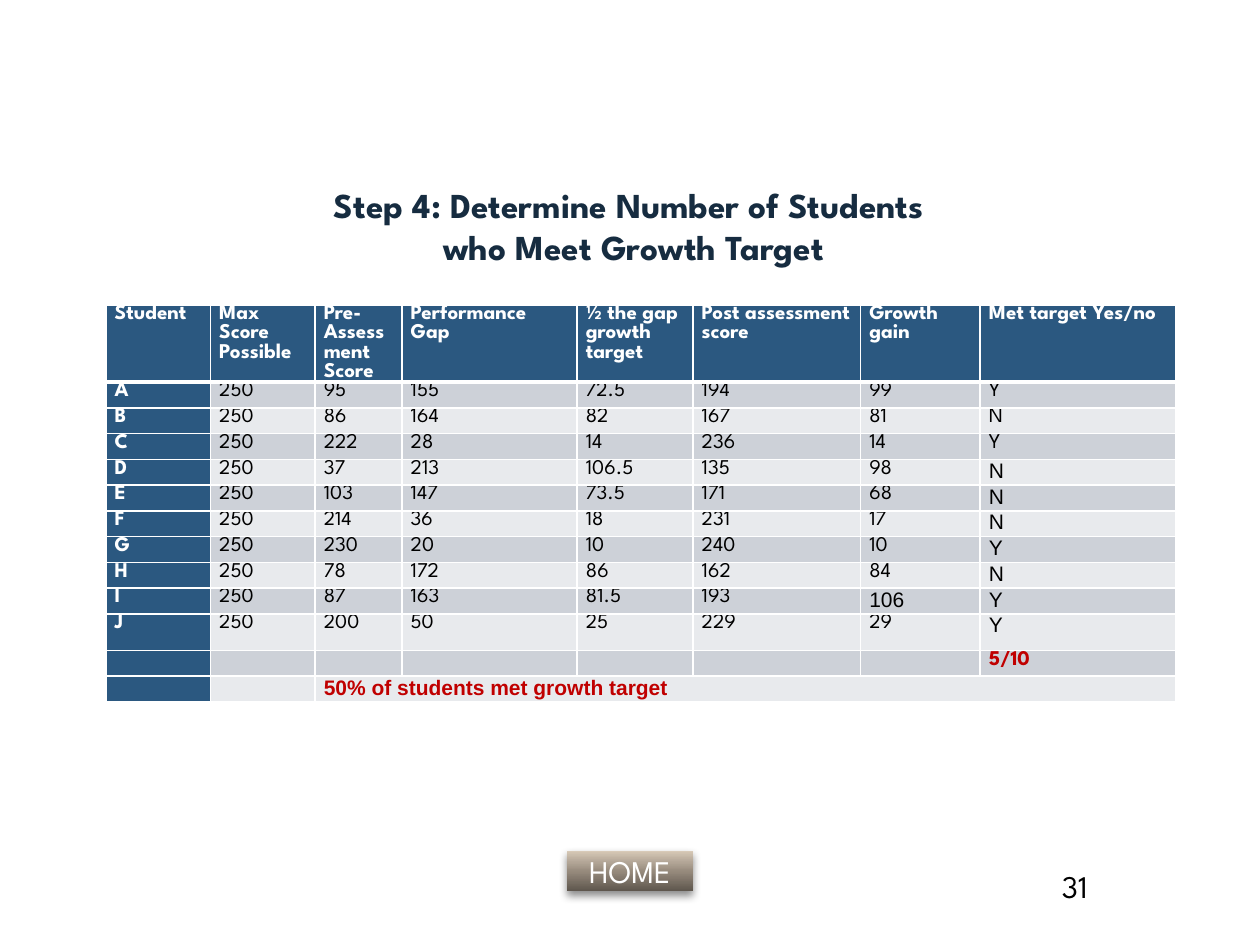
from dataclasses import dataclass
from lxml import etree
from pptx import Presentation
from pptx.dml.color import RGBColor
from pptx.enum.shapes import MSO_SHAPE as Shape
from pptx.enum.text import MSO_ANCHOR as Anchor, PP_ALIGN as Align
from pptx.oxml import parse_xml
from pptx.oxml.ns import nsdecls, qn
from pptx.util import Inches, Pt

HEADING = "League Spartan"
BLUE, WHITE, BLACK, RED = "2B5880", "FFFFFF", "000000", "C00000"
BANDS = ("CDD1D8", "E8EAED")


@dataclass(frozen=True)
class Style:
    size: float
    color: str = BLACK
    bold: bool = False
    name: str = HEADING


@dataclass(frozen=True)
class Student:
    name: str
    pre: str
    gap: str
    target: str
    post: str
    gain: str
    met: str

    def cells(self) -> list[str]:
        return [self.name, "250", self.pre, self.gap, self.target,
                self.post, self.gain, self.met]


HEADERS = ["Student", "Max Score Possible", "Pre-Assessment Score",
           "Performance Gap", "½ the gap growth target",
           "Post assessment score", "Growth gain", "Met target Yes/no"]
STUDENTS = [
    Student("A", "95", "155", "72.5", "194", "99", "Y"),
    Student("B", "86", "164", "82", "167", "81", "N"),
    Student("C", "222", "28", "14", "236", "14", "Y"),
    Student("D", "37", "213", "106.5", "135", "98", "N"),
    Student("E", "103", "147", "73.5", "171", "68", "N"),
    Student("F", "214", "36", "18", "231", "17", "N"),
    Student("G", "230", "20", "10", "240", "10", "Y"),
    Student("H", "78", "172", "86", "162", "84", "N"),
    Student("I", "87", "163", "81.5", "193", "106", "Y"),
    Student("J", "200", "50", "25", "229", "29", "Y"),
]
COL_WIDTHS = (0.83, 0.83, 0.69, 1.39, 0.92, 1.33, 0.95, 1.55)
HEADER_H, LAST_STUDENT_H, TABLE_H = 0.6, 0.29, 3.14
ROW_H = (TABLE_H - HEADER_H - LAST_STUDENT_H) / (len(STUDENTS) + 1)


def rgb(value: str) -> RGBColor:
    return RGBColor.from_string(value)


def set_attrs(obj, values: dict) -> None:
    for key, value in values.items():
        setattr(obj, key, value)


def write(p, text: str, style: Style) -> None:
    if not text:
        etree.SubElement(p._p, qn("a:endParaRPr"), sz=str(style.size * 100))
        return
    p.text = text
    for r in p.runs:
        set_attrs(r.font, {"size": Pt(style.size), "bold": style.bold,
                           "name": style.name})
        r.font.color.rgb = rgb(style.color)


def add_borders(cell, bottom: float) -> None:
    tc_pr = cell._tc.get_or_add_tcPr()
    for side, width in (("L", 1), ("R", 1), ("T", 1), ("B", bottom)):
        tc_pr.append(parse_xml(
            f'<a:ln{side} {nsdecls("a")} w="{Pt(width)}"><a:solidFill>'
            f'<a:srgbClr val="{WHITE}"/></a:solidFill></a:ln{side}>'))


def cell_style(row: int, col: int) -> Style:
    if row == 0 or col == 0:
        return Style(12, WHITE, True)
    if row > len(STUDENTS):
        return Style(12, RED, True, "Arial" if col == 2 else HEADING)
    arial = (col == 7 and row >= 4) or (row, col) == (9, 6)
    return Style(12, name="Arial" if arial else HEADING)


def add_growth_table(s) -> None:
    rows = [HEADERS, *(student.cells() for student in STUDENTS),
            [""] * 7 + ["5/10"],
            ["", "", "50% of students met growth target"] + [""] * 5]
    table = s.shapes.add_table(
        len(rows), len(HEADERS), Inches(0.84), Inches(2.42),
        Inches(sum(COL_WIDTHS)), Inches(TABLE_H)).table
    for column, width in zip(table.columns, COL_WIDTHS):
        column.width = Inches(width)
    for i, values in enumerate(rows):
        height = {0: HEADER_H, len(STUDENTS): LAST_STUDENT_H}.get(i, ROW_H)
        table.rows[i].height = Inches(height)
        for j, text in enumerate(values):
            cell = table.cell(i, j)
            set_attrs(cell, {"margin_left": Inches(0.07),
                             "margin_right": Inches(0.07),
                             "margin_top": 0, "margin_bottom": 0})
            add_borders(cell, 3 if i == 0 else 1)
            cell.fill.solid()
            fill = BLUE if i == 0 or j == 0 else BANDS[(i - 1) % 2]
            cell.fill.fore_color.rgb = rgb(fill)
            write(cell.text_frame.paragraphs[0], text, cell_style(i, j))
    table.cell(len(rows) - 1, 2).merge(table.cell(len(rows) - 1, 7))


def add_home_button(s) -> None:
    sp = s.shapes.add_shape(Shape.ACTION_BUTTON_CUSTOM, Inches(4.5),
                            Inches(6.75), Inches(1), Inches(0.32))
    sp.line.fill.background()
    stops = ((0, "5F574E"), (50, "988C7E"), (70, "B2A596"), (100, "D8CAB8"))
    stop_xml = "".join(f'<a:gs pos="{pos * 1000}"><a:srgbClr val="{color}"/></a:gs>'
                       for pos, color in stops)
    sp_pr = sp._element.spPr
    sp_pr.find(qn("a:prstGeom")).addnext(parse_xml(
        f'<a:gradFill {nsdecls("a")} rotWithShape="1"><a:gsLst>{stop_xml}</a:gsLst>'
        '<a:lin ang="16200000" scaled="0"/></a:gradFill>'))
    sp_pr.append(parse_xml(
        f'<a:effectLst {nsdecls("a")}><a:outerShdw blurRad="{Pt(5)}" '
        f'dist="{Pt(3)}" dir="5400000" rotWithShape="0"><a:srgbClr val="{BLACK}">'
        '<a:alpha val="45000"/></a:srgbClr></a:outerShdw></a:effectLst>'))
    tf = sp.text_frame
    set_attrs(tf, {"vertical_anchor": Anchor.MIDDLE, "word_wrap": True})
    p = tf.paragraphs[0]
    p.alignment = Align.CENTER
    write(p, "HOME", Style(18, WHITE))


def add_title(s) -> None:
    title = s.shapes.title
    set_attrs(title, {"left": Inches(0.03), "top": Inches(1.33),
                      "width": Inches(10), "height": Inches(0.92)})
    title.text_frame.vertical_anchor = Anchor.MIDDLE
    p = title.text_frame.paragraphs[0]
    set_attrs(p, {"alignment": Align.CENTER, "line_spacing": Pt(24)})
    write(p, "Step 4: Determine Number of Students \vwho Meet Growth Target",
          Style(20, "162C40", True))


def add_page_number(s) -> None:
    box = s.shapes.add_textbox(Inches(8.33), Inches(6.83),
                               Inches(1.17), Inches(0.52))
    box.text_frame.word_wrap = True
    write(box.text_frame.paragraphs[0], "31", Style(18))


def main() -> None:
    prs = Presentation()
    set_attrs(prs, {"slide_width": Inches(10), "slide_height": Inches(7.5)})
    s = prs.slides.add_slide(prs.slide_layouts[5])
    add_home_button(s)
    add_title(s)
    add_growth_table(s)
    add_page_number(s)
    prs.save("out.pptx")


if __name__ == "__main__":
    main()
